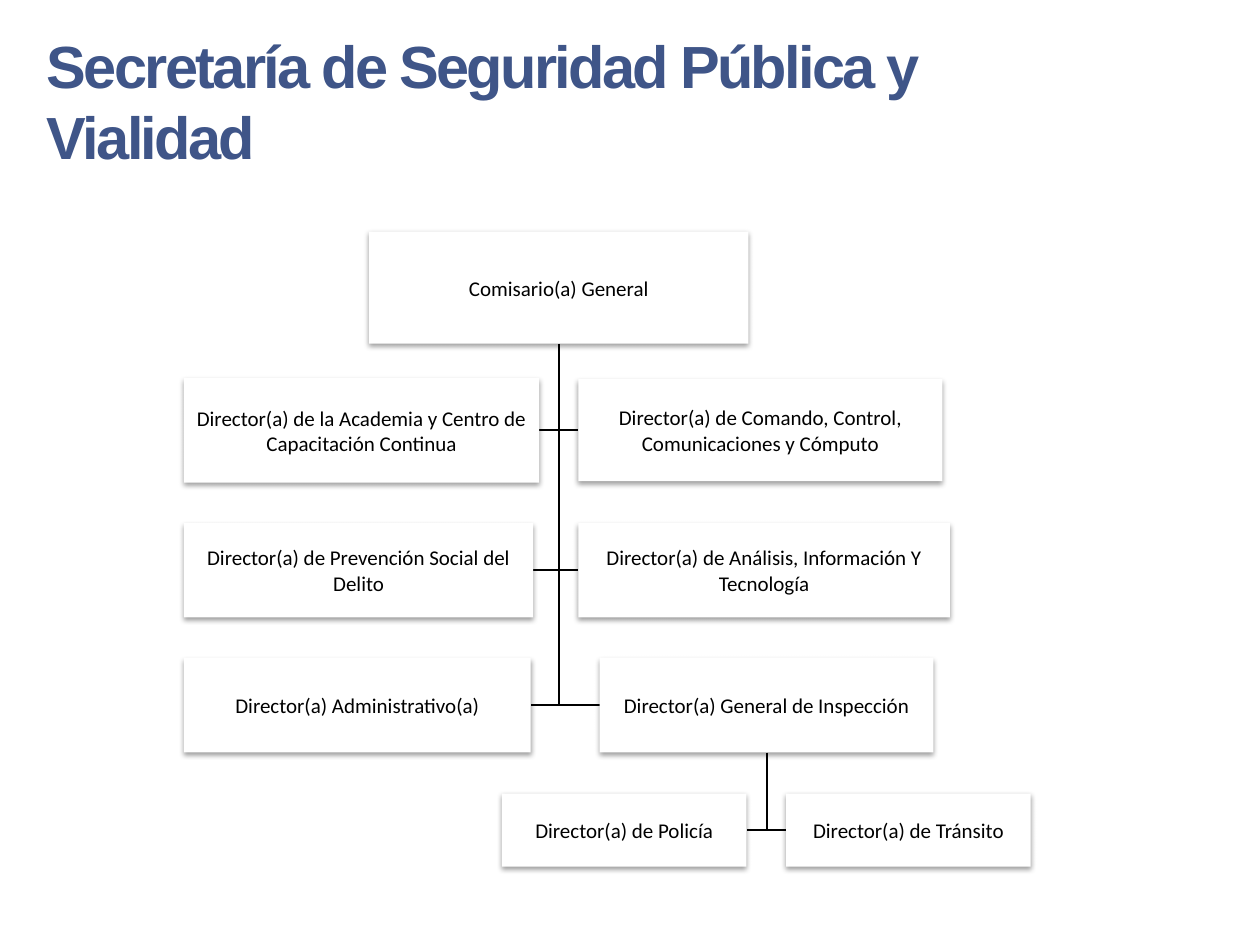
from dataclasses import dataclass

from lxml import etree
from pptx import Presentation
from pptx.dml.color import RGBColor
from pptx.enum.shapes import MSO_SHAPE
from pptx.enum.text import MSO_ANCHOR, MSO_AUTO_SIZE, PP_ALIGN
from pptx.oxml.ns import qn
from pptx.shapes.autoshape import Shape
from pptx.slide import Slide
from pptx.util import Cm, Pt

RECT = MSO_SHAPE.RECTANGLE
TOP, MIDDLE = MSO_ANCHOR.TOP, MSO_ANCHOR.MIDDLE
LEFT, CENTER = PP_ALIGN.LEFT, PP_ALIGN.CENTER
GROW = MSO_AUTO_SIZE.SHAPE_TO_FIT_TEXT
COLORS = {"title": "3F5588", "text": "000000", "line": "000000",
          "box": "FFFFFF", "shadow": "000000"}


@dataclass
class Post:
    """A box of the chart; lengths in cm, one text line per paragraph."""
    text: str
    left: float
    top: float
    width: float
    height: float
    boss: int | None = None

    @property
    def mid(self) -> float:
        return self.left + self.width / 2


COL, SIDE = 3.71, 11.66
ROWS = (7.62, 10.54, 13.26, 16.0)
POSTS = [
    Post("Comisario(a) General", 7.44, 4.67, 7.65, 2.26),
    Post("Director(a) de la Academia y Centro de Capacitación Continua",
         COL, ROWS[0], 7.16, 2.11, 0),
    Post("Director(a) de Comando, Control,\nComunicaciones y Cómputo",
         SIDE, ROWS[0] + 0.02, 7.34, 2.06, 0),
    Post("Director(a) de Prevención Social del Delito",
         COL, ROWS[1], 7.04, 1.91, 0),
    Post("Director(a) de Análisis, Información Y Tecnología",
         SIDE, ROWS[1], 7.49, 1.91, 0),
    Post("Director(a) Administrativo(a)", COL, ROWS[2], 6.99, 1.91, 0),
    Post("Director(a) General de Inspección", 12.09, ROWS[2], 6.73, 1.91, 0),
    Post("Director(a) de Policía", 10.12, ROWS[3], 4.93, 1.47, 6),
    Post("Director(a) de Tránsito", 15.85, ROWS[3], 4.93, 1.47, 6),
]


def color(name: str) -> RGBColor:
    return RGBColor.from_string(COLORS[name])


def add_shadow(shape: Shape) -> None:
    shape.shadow.inherit = False
    effects = shape._element.spPr.find(qn("a:effectLst"))
    outer = etree.SubElement(effects, qn("a:outerShdw"), blurRad=str(Pt(3.1)),
                             dist=str(Pt(1.6)), dir="5400000", rotWithShape="0")
    tint = etree.SubElement(outer, qn("a:srgbClr"), val=COLORS["shadow"])
    etree.SubElement(tint, qn("a:alpha"), val="38000")


def add_title(slide: Slide, text: str) -> None:
    title = slide.shapes.title
    title.left, title.top = Cm(0.69), Cm(0.46)
    title.width, title.height = Cm(18.95), Cm(3.25)
    frame = title.text_frame
    frame.word_wrap, frame.auto_size = True, GROW
    frame.vertical_anchor = TOP
    para = frame.paragraphs[0]
    para.alignment = LEFT
    run = para.add_run()
    run.text = text
    font = run.font
    font.name, font.size, font.bold = "Arial", Pt(34), True
    font.color.rgb = color("title")
    run._r.get_or_add_rPr().set("spc", "-150")


def add_elbow(slide: Slide, boss: Post, post: Post) -> None:
    """Draw a line down from the boss, then across to the post's near side."""
    row = Cm(post.top + post.height / 2)
    near = post.left + (post.width if post.mid < boss.mid else 0)
    trunk = Cm(boss.mid)
    path = slide.shapes.build_freeform(trunk, Cm(boss.top + boss.height))
    path.add_line_segments([(trunk, row), (Cm(near), row)], close=False)
    elbow = path.convert_to_shape()
    elbow.shadow.inherit = False
    elbow.fill.background()
    elbow.line.color.rgb = color("line")
    elbow.line.width = Pt(1)


def add_post(slide: Slide, post: Post) -> None:
    box = slide.shapes.add_shape(RECT, Cm(post.left), Cm(post.top),
                                 Cm(post.width), Cm(post.height))
    box.fill.solid()
    box.fill.fore_color.rgb = color("box")
    box.line.fill.background()
    add_shadow(box)
    frame = box.text_frame
    frame.word_wrap, frame.vertical_anchor = True, MIDDLE
    frame.margin_left = frame.margin_right = Cm(0.02)
    frame.margin_top = frame.margin_bottom = Cm(0.02)
    for i, line in enumerate(post.text.split("\n")):
        para = frame.add_paragraph() if i else frame.paragraphs[0]
        para.alignment = CENTER
        run = para.add_run()
        run.text = line
        run.font.name, run.font.size = "Calibri", Pt(12)
        run.font.color.rgb = color("text")


def main() -> None:
    deck = Presentation()
    deck.slide_width, deck.slide_height = Cm(25.4), Cm(19.05)
    slide = deck.slides.add_slide(deck.slide_layouts[5])
    add_title(slide, "Secretaría de Seguridad Pública y Vialidad")
    for post in POSTS:
        if post.boss is not None:
            add_elbow(slide, POSTS[post.boss], post)
    for post in POSTS:
        add_post(slide, post)
    deck.save("out.pptx")


if __name__ == "__main__":
    main()
